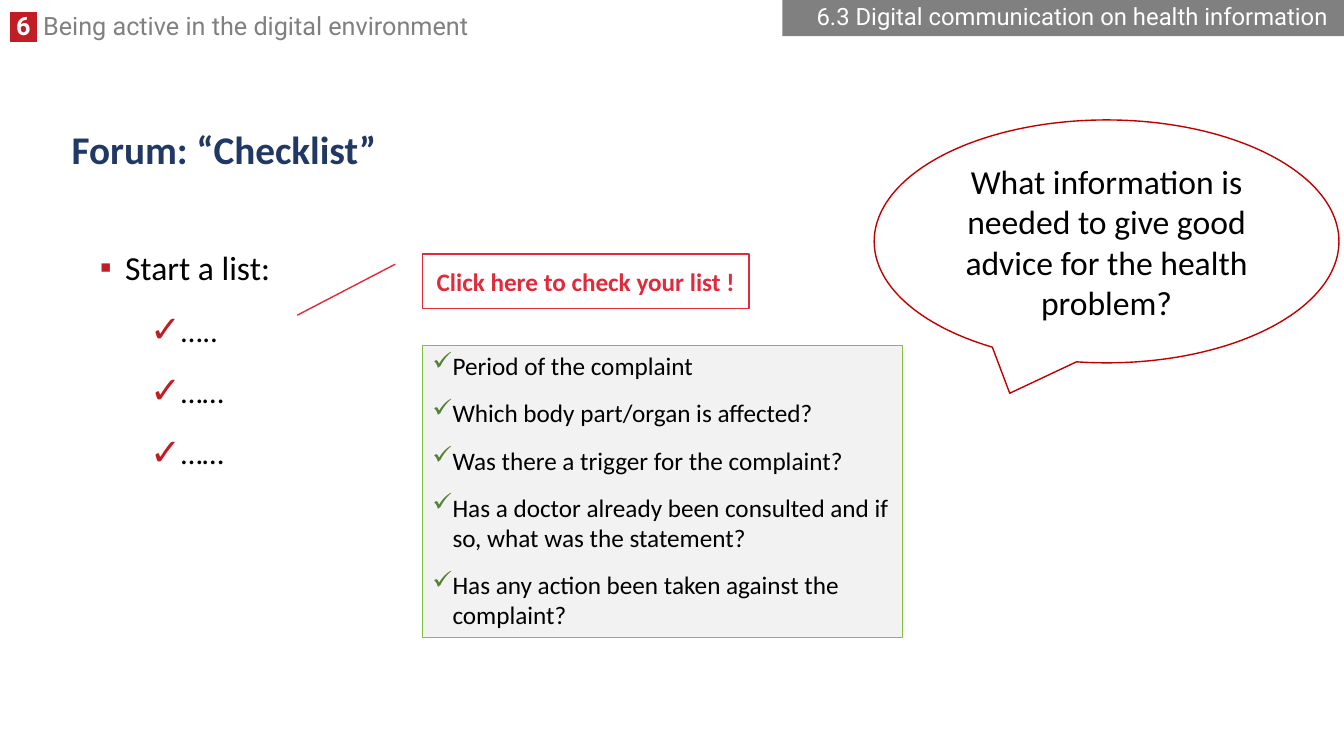
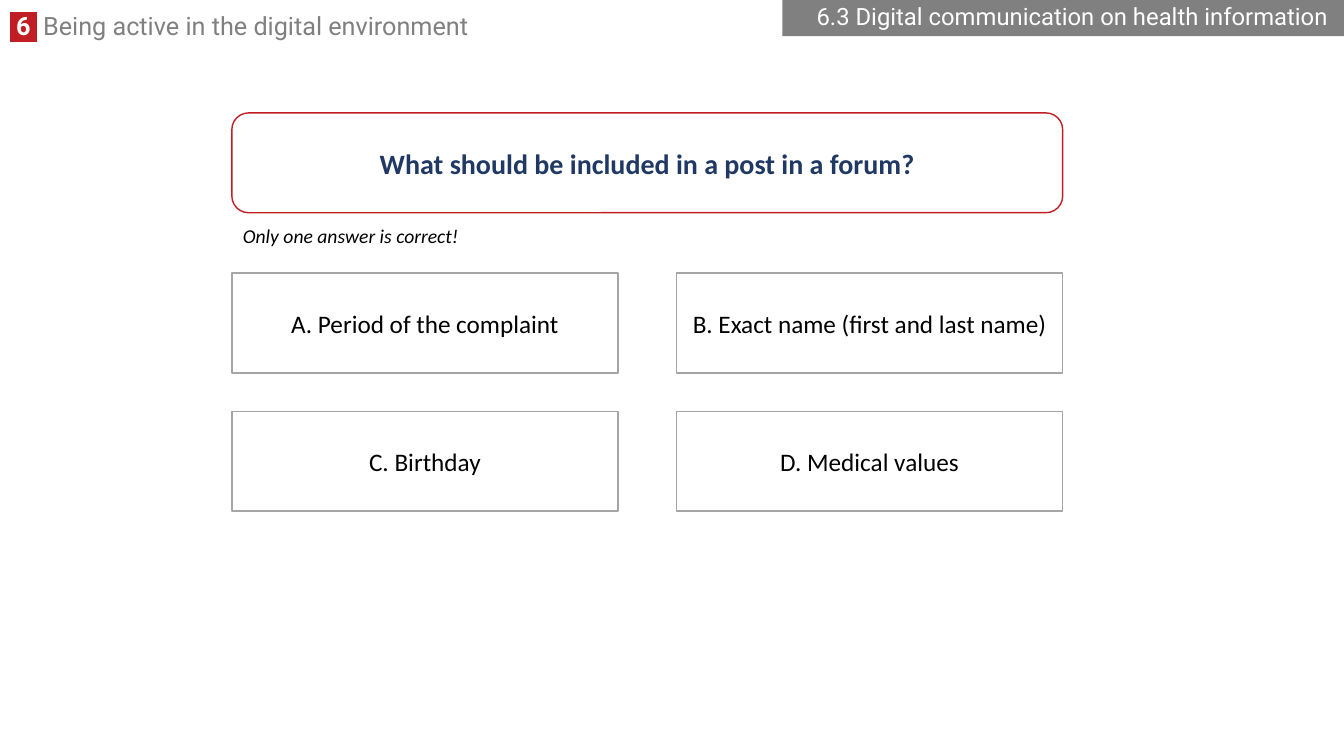
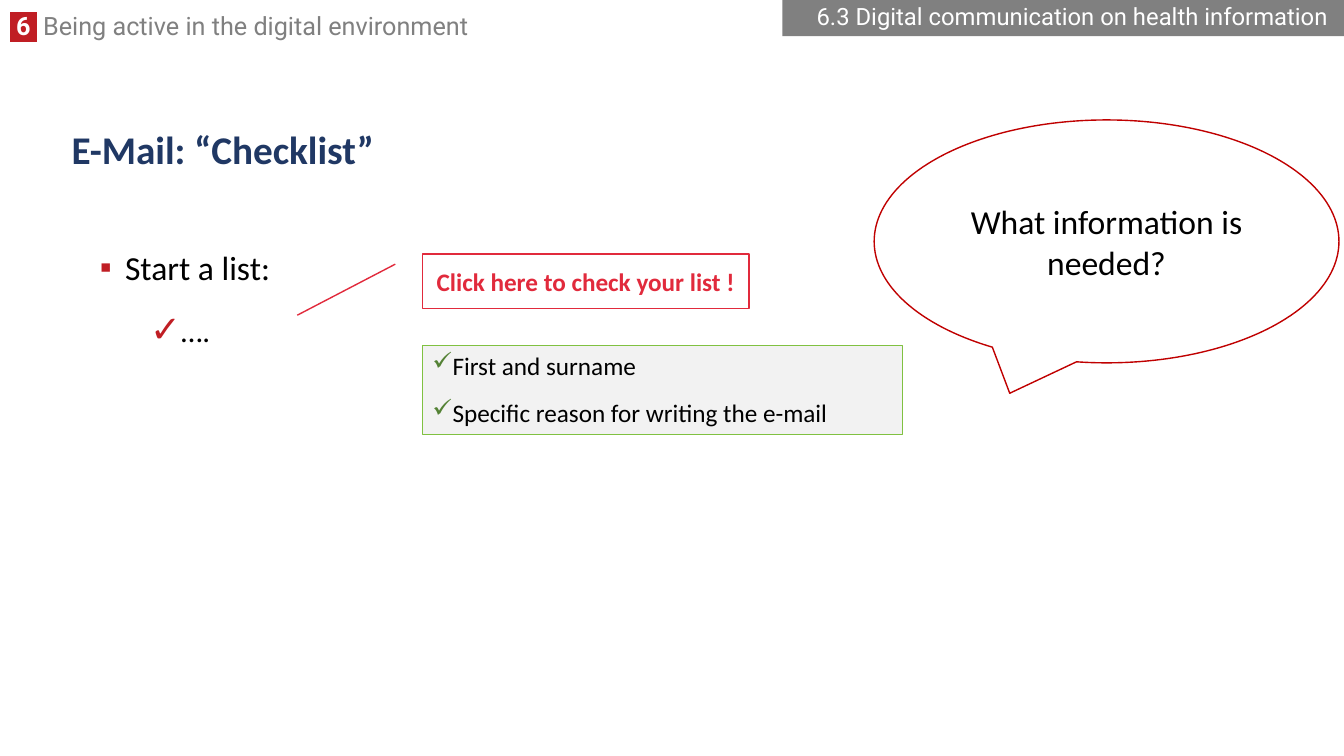
from lxml.etree import SubElement
from pptx import Presentation
from pptx.dml.color import RGBColor
from pptx.enum.shapes import MSO_SHAPE as SHAPE
from pptx.enum.text import MSO_ANCHOR as ANCHOR, MSO_AUTO_SIZE as FIT, PP_ALIGN as ALIGN
from pptx.oxml.ns import qn
from pptx.util import Inches, Pt

COLORS = {
    "white": "FFFFFF", "black": "000000", "gray": "808080", "navy": "203864",
    "red": "C01E24", "callout": "C00000", "click": "E12A3C", "border": "A5A5A5",
    "panel": "F2F2F2", "green": "80C141", "check": "548235",
}
LIST_SPACING = {"space_before": Pt(6), "space_after": Pt(6)}
BODY_SPACING = {**LIST_SPACING, "line_spacing": 1.2}
CENTER = {"alignment": ALIGN.CENTER}
STYLES = {
    "title": {"size": 28, "color": "navy", "font": {"bold": True},
              "paragraph": {"alignment": ALIGN.LEFT, "line_spacing": 0.9}},
    "chapter": {"size": 18, "color": "gray", "font": {"name": "Roboto"},
                "paragraph": {"line_spacing": 0.8}},
    "section": {"size": 17, "color": "white", "font": {"name": "Roboto"},
                "paragraph": {"alignment": ALIGN.RIGHT, "line_spacing": 0.9}},
    "callout": {"size": 24, "color": "black", "paragraph": CENTER},
    "click": {"size": 18, "color": "click", "font": {"bold": True}, "paragraph": CENTER},
    "question": {"size": 20, "color": "navy", "font": {"bold": True}, "paragraph": CENTER},
    "answer": {"size": 18, "color": "black", "paragraph": CENTER},
    "hint": {"size": 14, "color": "black", "font": {"italic": True},
             "paragraph": {"alignment": ALIGN.LEFT}},
    "start": {"size": 24, "color": "black", "paragraph": BODY_SPACING,
              "bullet": ("▪", "red", 100, 0.25, 0.25)},
    "entry": {"size": 22, "color": "black", "paragraph": {**BODY_SPACING, "level": 1},
              "bullet": ("✓", "red", 120, 0.75, 0.25)},
    "check": {"size": 18, "color": "black",
              "paragraph": {**LIST_SPACING, "alignment": ALIGN.LEFT},
              "bullet": ("✓", "check", 100, 0.2, 0.2)},
}


def write_text(shape, lines, anchor=ANCHOR.MIDDLE, fit=FIT.NONE, wrap=True):
    frame = shape.text_frame
    frame.auto_size = fit
    frame.word_wrap = wrap
    frame.vertical_anchor = anchor
    for index, (text, style_name) in enumerate(lines):
        style = STYLES[style_name]
        paragraph = frame.add_paragraph() if index else frame.paragraphs[0]
        for name, value in style["paragraph"].items():
            setattr(paragraph, name, value)
        if index == 0:
            paragraph.space_before = Pt(0)
        if "bullet" in style:
            character, color, percent, left, hanging = style["bullet"]
            properties = list(shape.element.iter(qn("a:pPr")))[-1]
            properties.set("marL", str(Inches(left)))
            properties.set("indent", str(-Inches(hanging)))
            bullet_color = SubElement(properties, qn("a:buClr"))
            SubElement(bullet_color, qn("a:srgbClr"), val=COLORS[color])
            SubElement(properties, qn("a:buSzPct"), val=str(percent * 1000))
            SubElement(properties, qn("a:buChar"), char=character)
        run = paragraph.add_run()
        run.text = text
        run.font.size = Pt(style["size"])
        run.font.color.rgb = RGBColor.from_string(COLORS[style["color"]])
        for name, value in {"name": "Calibri", **style.get("font", {})}.items():
            setattr(run.font, name, value)


def add_box(slide, kind, position, fill, line=None, width=1):
    shape = slide.shapes.add_shape(kind, *map(Inches, position))
    shape.shadow.inherit = False
    shape.fill.solid()
    shape.fill.fore_color.rgb = RGBColor.from_string(COLORS[fill])
    if line:
        shape.line.color.rgb = RGBColor.from_string(COLORS[line])
        shape.line.width = Pt(width)
    else:
        shape.line.fill.background()
    return shape


presentation = Presentation()
presentation.slide_width = Inches(13.33)
presentation.slide_height = Inches(7.5)
forum, quiz, email = [
    presentation.slides.add_slide(presentation.slide_layouts[index]) for index in (1, 6, 1)
]

chapter = forum.shapes.add_textbox(*map(Inches, (0, 0.11, 9.52, 0.35)))
write_text(chapter, [(" 6 ", "chapter")], ANCHOR.TOP, FIT.SHAPE_TO_FIT_TEXT)
paragraph = chapter.text_frame.paragraphs[0]
number = paragraph.runs[0]
number.font.bold = True
number.font.color.rgb = RGBColor.from_string(COLORS["white"])
number_properties = next(chapter.element.iter(qn("a:rPr")))
highlight = SubElement(number_properties, qn("a:highlight"))
SubElement(highlight, qn("a:srgbClr"), val=COLORS["red"])
number_properties.find(qn("a:solidFill")).addnext(highlight)
name = paragraph.add_run()
name.text = " Being active in the digital environment"
name.font.name = "Roboto"
name.font.size = Pt(18)
name.font.color.rgb = RGBColor.from_string(COLORS["gray"])

section = add_box(forum, SHAPE.RECTANGLE, (7.76, 0, 5.57, 0.36), "gray")
write_text(section, [("6.3 Digital communication on health information ", "section")])

for shape_id, shape in enumerate((chapter, section), 20):
    next(shape.element.iter(qn("p:cNvPr"))).set("id", str(shape_id))
    presentation.slide_master.shapes.element.append(shape.element)

checklists = [
    (forum, "Forum: “Checklist”",
     "What information is needed to give good advice for the health problem?",
     ["…..", "……", "……"], 2.89,
     ["Period of the complaint",
      "Which body part/organ is affected?",
      "Was there a trigger for the complaint?",
      "Has a doctor already been consulted and if so, what was the statement?",
      "Has any action been taken against the complaint?"]),
    (email, "E-Mail: “Checklist”", "What information is needed?", ["…."], 0.88,
     ["First and surname", "Specific reason for writing the e-mail"]),
]
for slide, title_text, question, entries, height, checks in checklists:
    title, body = slide.placeholders
    for placeholder, position in ((title, (0.61, 1.18, 12.1, 0.66)),
                                  (body, (0.89, 2.32, 7.95, 4.7))):
        placeholder.left, placeholder.top, placeholder.width, placeholder.height = map(
            Inches, position)
    write_text(title, [(title_text, "title")])
    write_text(body, [("Start a list:", "start")] + [(entry, "entry") for entry in entries],
               ANCHOR.TOP)

    callout = add_box(slide, SHAPE.OVAL_CALLOUT, (8.67, 1.19, 4.61, 2.41), "white", "callout")
    write_text(callout, [(question, "callout")])

    panel = add_box(slide, SHAPE.RECTANGLE, (4.19, 3.43, 4.76, height), "panel", "green", 0.75)
    write_text(panel, [(check, "check") for check in checks], ANCHOR.TOP,
               FIT.SHAPE_TO_FIT_TEXT)

    click = add_box(slide, SHAPE.LINE_CALLOUT_1, (4.19, 2.52, 3.24, 0.54), "white", "click")
    write_text(click, [("Click here to check your list !", "click")])

question_box = add_box(quiz, SHAPE.ROUNDED_RECTANGLE, (2.3, 1.12, 8.24, 0.99), "white", "red")
write_text(question_box, [("What should be included in a post in a forum?", "question")])

answers = ["A. Period of the complaint", "B. Exact name (first and last name)",
           "C. Birthday", "D. Medical values"]
for index, answer in enumerate(answers):
    row, column = divmod(index, 2)
    position = (2.3 + 4.41 * column, 2.71 + 1.37 * row, 3.83, 0.99)
    answer_box = add_box(quiz, SHAPE.RECTANGLE, position, "white", "border")
    write_text(answer_box, [(answer, "answer")])

hint = quiz.shapes.add_textbox(*map(Inches, (2.31, 2.17, 2.36, 0.34)))
write_text(hint, [("Only one answer is correct!", "hint")], ANCHOR.TOP,
           FIT.SHAPE_TO_FIT_TEXT, wrap=False)

presentation.save("out.pptx")
